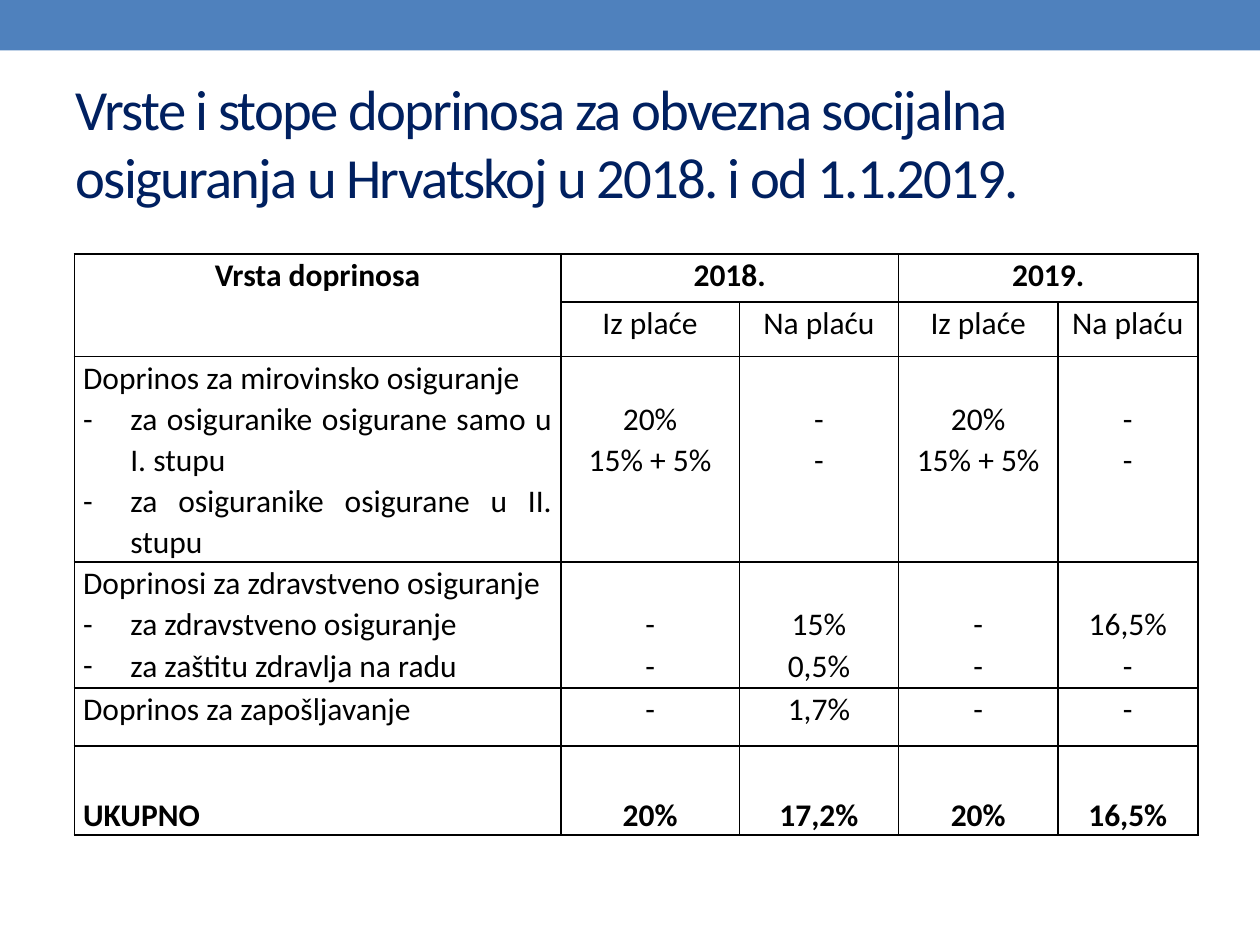
from lxml.etree import SubElement
from pptx import Presentation
from pptx.dml.color import RGBColor
from pptx.enum.shapes import MSO_SHAPE as Shape
from pptx.enum.text import MSO_ANCHOR as Anchor, MSO_AUTO_SIZE as AutoSize, PP_ALIGN as Align
from pptx.oxml.ns import qn
from pptx.util import Pt

COLUMN_WIDTHS = [278, 102, 91, 91, 80]
ROW_HEIGHTS = [27.5, 31, 111, 72, 33, 51]
LINE_HEIGHT = 23.5
INDENT = 27
HEADER_ROWS = [
    ["Vrsta doprinosa", "2018.", "", "2019.", ""],
    ["", "Iz plaće", "Na plaću", "Iz plaće", "Na plaću"],
]
GROUP_ROWS = [
    [["Doprinos za mirovinsko osiguranje",
      "za osiguranike osigurane samo u I. stupu",
      "za osiguranike osigurane u II. stupu"],
     ["20%", "15% + 5%"], ["-", "-"], ["20%", "15% + 5%"], ["-", "-"]],
    [["Doprinosi za zdravstveno osiguranje",
      "za zdravstveno osiguranje",
      "za zaštitu zdravlja na radu"],
     ["-", "-"], ["15%", "0,5%"], ["-", "-"], ["16,5%", "-"]],
]
SINGLE_ROW = ["Doprinos za zapošljavanje", "-", "1,7%", "-", "-"]
TOTAL_ROW = ["UKUPNO", "20%", "17,2%", "20%", "16,5%"]


def color(value):
    """Turn a hex string into a colour."""
    return RGBColor.from_string(value)


def apply(target, values):
    """Set every attribute in the dict on the target."""
    for name, value in values.items():
        setattr(target, name, value)


def write(para, text, size, ink, bold=False):
    """Add one formatted span to a paragraph."""
    span = para.add_run()
    span.text = text
    apply(span.font, {"name": "Calibri", "size": Pt(size), "bold": bold})
    span.font.color.rgb = color(ink)
    return span


def add_band(page):
    """Draw the band across the top of the page."""
    band = page.shapes.add_shape(Shape.RECTANGLE, 0, 0, Pt(720), Pt(28.8))
    band.shadow.inherit = False
    band.fill.solid()
    band.fill.fore_color.rgb = color("4F81BD")
    band.line.fill.background()


def format_title(page, text):
    """Place and fill the title placeholder."""
    title = page.shapes.title
    apply(title, {"left": Pt(36), "top": Pt(41.8), "width": Pt(648), "height": Pt(120)})
    apply(title.text_frame, {
        "auto_size": AutoSize.NONE, "word_wrap": True, "vertical_anchor": Anchor.TOP,
        "margin_left": Pt(7.2), "margin_right": Pt(7.2), "margin_top": Pt(0.5),
    })
    para = title.text_frame.paragraphs[0]
    para.alignment = Align.LEFT
    span = write(para, text, 32.4, "002060")
    span.font._element.set("spc", "-100")


def add_bullet(para):
    """Give a paragraph a hanging dash."""
    properties = para._p.get_or_add_pPr()
    properties.set("marL", str(Pt(INDENT)))
    properties.set("indent", str(-Pt(INDENT)))
    SubElement(properties, qn("a:buFont"), typeface="Calibri")
    SubElement(properties, qn("a:buChar"), char="-")


def add_borders(cell):
    """Draw a thin black line on each side of a cell."""
    properties = cell._tc.get_or_add_tcPr()
    for side in ("lnL", "lnR", "lnT", "lnB"):
        line = SubElement(properties, qn(f"a:{side}"), w=str(Pt(1)))
        fill = SubElement(line, qn("a:solidFill"))
        SubElement(fill, qn("a:srgbClr"), val="000000")


def format_cell(cell):
    """Set the borders, fill and margins of a cell."""
    add_borders(cell)
    cell.fill.background()
    apply(cell, {"margin_left": Pt(5), "margin_right": Pt(5),
                 "margin_top": 0, "margin_bottom": 0})


def fill_cell(cell, lines, align, bold=False, bullets=False, spacing=1.07):
    """Write lines into a cell, with dashes after the first line if asked."""
    for index, text in enumerate(lines):
        box = cell.text_frame
        para = box.add_paragraph() if index else box.paragraphs[0]
        dashed = bullets and index > 0
        if dashed:
            add_bullet(para)
        apply(para, {"alignment": Align.JUSTIFY if dashed else align,
                     "line_spacing": spacing})
        write(para, text, 18, "000000", bold)


def column_align(column):
    """Left-align the label column and centre the others."""
    return Align.CENTER if column else Align.LEFT


def fill_header(table):
    """Merge and fill the two header rows."""
    for start, end in (((0, 0), (1, 0)), ((0, 1), (0, 2)), ((0, 3), (0, 4))):
        table.cell(*start).merge(table.cell(*end))
    for row, labels in enumerate(HEADER_ROWS):
        for column, label in enumerate(labels):
            if label:
                fill_cell(table.cell(row, column), [label], Align.CENTER, bold=row == 0)


def fill_body(table):
    """Fill the contribution rows and the total."""
    for row, groups in enumerate(GROUP_ROWS, 2):
        for column, lines in enumerate(groups):
            cell = table.cell(row, column)
            fill_cell(cell, lines, column_align(column), bullets=column == 0)
            if column:
                cell.margin_top = Pt(LINE_HEIGHT)
    for column, text in enumerate(SINGLE_ROW):
        fill_cell(table.cell(4, column), [text], column_align(column))
    for column, text in enumerate(TOTAL_ROW):
        cell = table.cell(5, column)
        cell.vertical_anchor = Anchor.BOTTOM
        fill_cell(cell, [text], column_align(column), bold=True, spacing=1.0)


def add_rates_table(page):
    """Add the table of contribution rates."""
    frame = page.shapes.add_table(
        len(ROW_HEIGHTS), len(COLUMN_WIDTHS), Pt(42.5), Pt(145.2),
        Pt(sum(COLUMN_WIDTHS)), Pt(sum(ROW_HEIGHTS)))
    table = frame.table
    apply(table, {"first_row": False, "horz_banding": False})
    for column, width in zip(table.columns, COLUMN_WIDTHS):
        column.width = Pt(width)
    for row, height in zip(table.rows, ROW_HEIGHTS):
        row.height = Pt(height)
    for cell in table.iter_cells():
        format_cell(cell)
    fill_header(table)
    fill_body(table)


def main():
    """Build and save the deck."""
    deck = Presentation()
    apply(deck, {"slide_width": Pt(720), "slide_height": Pt(540)})
    page = deck.slides.add_slide(deck.slide_layouts[5])
    add_band(page)
    format_title(page, "Vrste i stope doprinosa za obvezna socijalna "
                       "osiguranja u Hrvatskoj u 2018. i od 1.1.2019.")
    add_rates_table(page)
    deck.save("out.pptx")


if __name__ == "__main__":
    main()
